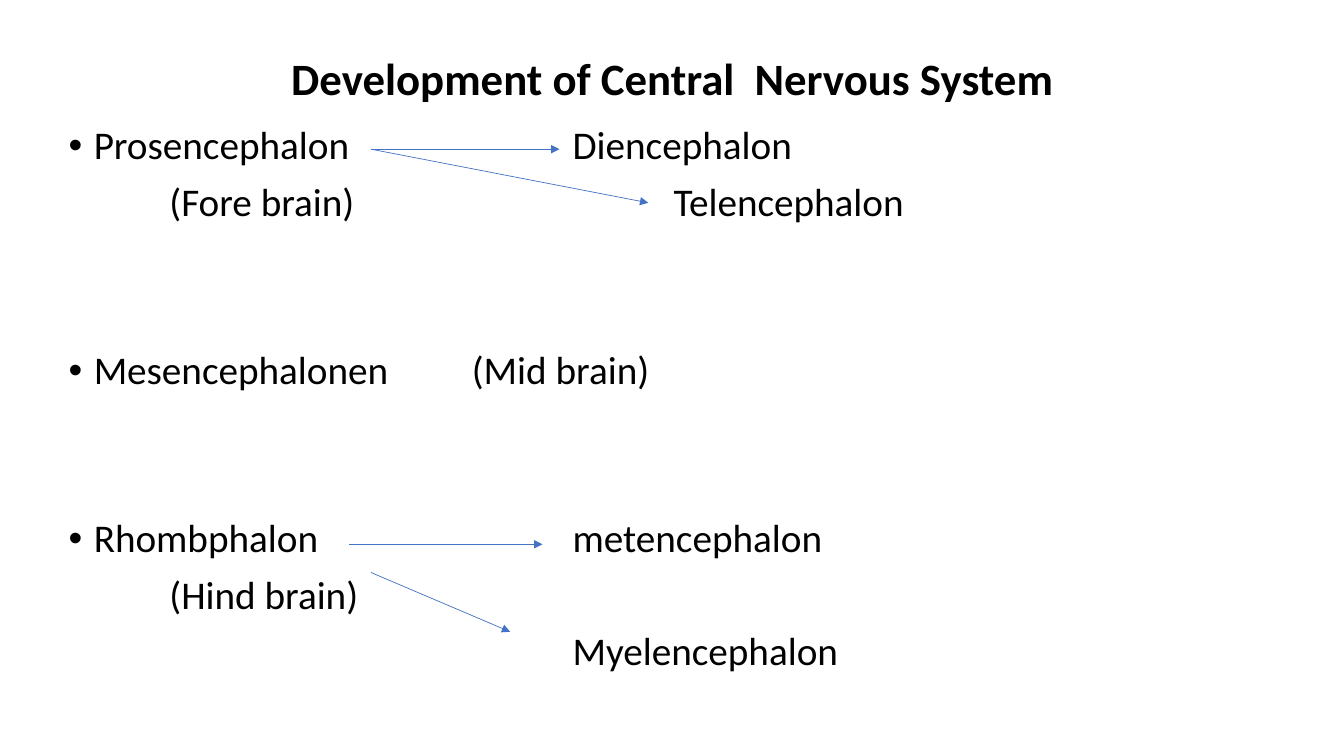
from lxml.etree import SubElement
from pptx import Presentation
from pptx.dml.color import RGBColor
from pptx.enum.shapes import MSO_CONNECTOR
from pptx.enum.text import MSO_ANCHOR, MSO_AUTO_SIZE, PP_ALIGN
from pptx.oxml.ns import qn
from pptx.util import Inches, Pt

COLORS = {"text": "000000", "arrow": "4472C4"}
FONT = "Calibri"
TAB = 1  # inches between text columns
ROW = 0.56  # inches from one text line to the next
TEXT_LEFT, FIRST_ROW = 0.68, 1.48
LINE_GAP = 10  # points before a line
SECTION_GAP = 90  # points before a new brain division


def add_text(para, text, size, bold=False, align=PP_ALIGN.LEFT, gap=0):
    para.alignment = align
    para.line_spacing = 0.9
    para.space_before = Pt(gap)
    span = para.add_run()
    span.text = text
    span.font.name = FONT
    span.font.size = Pt(size)
    span.font.bold = bold
    span.font.color.rgb = RGBColor.from_string(COLORS["text"])


def place(box, left, top, width, height, anchor):
    box.left, box.top = Inches(left), Inches(top)
    box.width, box.height = Inches(width), Inches(height)
    box.text_frame.auto_size = MSO_AUTO_SIZE.NONE
    box.text_frame.vertical_anchor = anchor


deck = Presentation()
deck.slide_width, deck.slide_height = Inches(13.33), Inches(7.5)
page = deck.slides.add_slide(deck.slide_layouts[1])

title, body = page.placeholders
place(title, 0.92, 0.4, 11.5, 0.8, MSO_ANCHOR.MIDDLE)
add_text(title.text_frame.paragraphs[0], "Development of Central  Nervous System", 32,
         bold=True, align=PP_ALIGN.CENTER)

# Text, bulleted, points before
lines = [
    ("Prosencephalon\t\t\tDiencephalon", True, LINE_GAP),
    ("\t(Fore brain)\t\t\t\tTelencephalon", False, LINE_GAP),
    ("Mesencephalonen\t(Mid brain)", True, SECTION_GAP),
    ("Rhombphalon\t\t\tmetencephalon", True, SECTION_GAP),
    ("\t(Hind brain)", False, LINE_GAP),
    ("\t\t\t\t\tMyelencephalon", False, LINE_GAP),
]
place(body, 0.58, 1.2, 12.29, 5.9, MSO_ANCHOR.TOP)
for index, (text, bulleted, gap) in enumerate(lines):
    para = body.text_frame.paragraphs[0] if index == 0 else body.text_frame.add_paragraph()
    add_text(para, text, 28, gap=gap)
    indent = Inches(0.25) if bulleted else 0
    properties = para._p.get_or_add_pPr()
    properties.set("marL", str(indent))
    properties.set("indent", str(-indent))
    properties.set("defTabSz", str(Inches(TAB)))
    if bulleted:
        SubElement(properties, qn("a:buFont")).set("typeface", "Arial")
        SubElement(properties, qn("a:buChar")).set("char", "•")
    else:
        SubElement(properties, qn("a:buNone"))

# Start column, start row, end column, end row
arrows = [
    (3, 0, 4.87, 0),
    (3, 0, 5.75, 0.95),
    (2.78, 7, 4.7, 7),
    (3, 7.5, 4.38, 8.55),
]
for start_column, start_row, end_column, end_row in arrows:
    arrow = page.shapes.add_connector(
        MSO_CONNECTOR.STRAIGHT,
        Inches(TEXT_LEFT + start_column * TAB), Inches(FIRST_ROW + start_row * ROW),
        Inches(TEXT_LEFT + end_column * TAB), Inches(FIRST_ROW + end_row * ROW))
    arrow.line.color.rgb = RGBColor.from_string(COLORS["arrow"])
    arrow.line.width = Pt(0.5)
    SubElement(arrow.line._get_or_add_ln(), qn("a:tailEnd")).set("type", "triangle")
    SubElement(arrow._element.spPr, qn("a:effectLst"))

deck.save("out.pptx")
